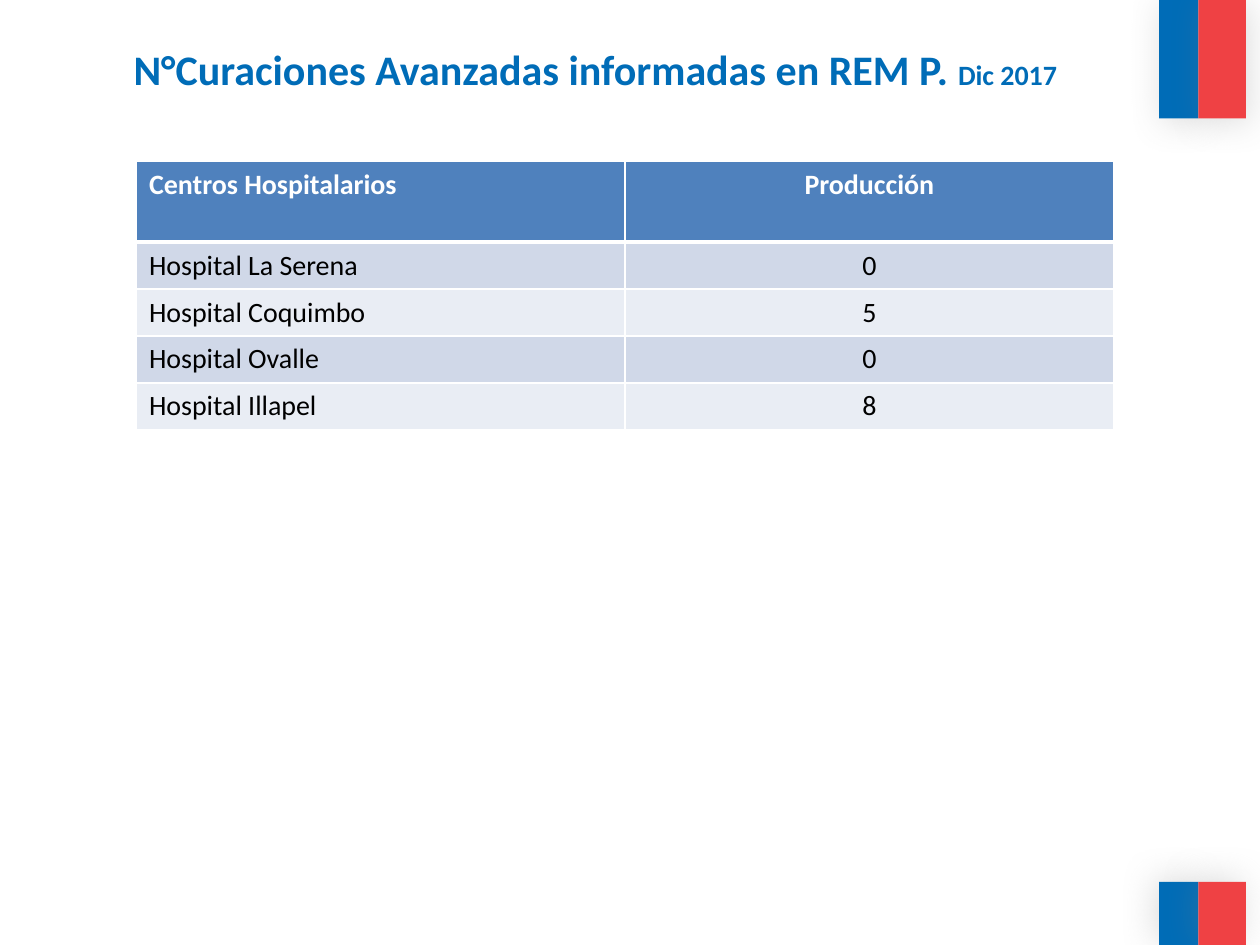
from lxml import etree
from pptx import Presentation
from pptx.dml.color import RGBColor
from pptx.enum.shapes import MSO_SHAPE
from pptx.enum.text import MSO_ANCHOR, PP_ALIGN
from pptx.oxml import parse_xml
from pptx.oxml.ns import nsdecls, qn
from pptx.util import Pt

RECTANGLE = MSO_SHAPE.RECTANGLE
LEFT, CENTER = PP_ALIGN.LEFT, PP_ALIGN.CENTER
TOP = MSO_ANCHOR.TOP

FONT = "Calibri"
BLUE = RGBColor(0x00, 0x6C, 0xB7)
RED = RGBColor(0xEF, 0x41, 0x44)
HEADER_BLUE = RGBColor(0x4F, 0x81, 0xBD)
BANDS = (RGBColor(0xD0, 0xD8, 0xE8), RGBColor(0xE9, 0xED, 0xF4))
WHITE = RGBColor(0xFF, 0xFF, 0xFF)
BLACK = RGBColor(0x00, 0x00, 0x00)
GRAY = RGBColor(0x80, 0x80, 0x80)

ROWS = [
    ("Centros Hospitalarios", "Producción"),
    ("Hospital La Serena", "0"),
    ("Hospital Coquimbo", "5"),
    ("Hospital Ovalle", "0"),
    ("Hospital Illapel", "8"),
]
HEADER_HEIGHT, ROW_HEIGHT = 46, 26.8


def add_shadow(shape, degrees):
    """Give the shape a soft gray shadow in the given direction."""
    shape.shadow.inherit = False
    effects = shape._element.spPr.find(qn("a:effectLst"))
    effects.append(parse_xml(
        f'<a:outerShdw {nsdecls("a")} blurRad="{Pt(20)}" dist="{Pt(3)}" '
        f'dir="{degrees * 60000}" algn="ctr" rotWithShape="0">'
        f'<a:srgbClr val="{GRAY}"><a:alpha val="25000"/></a:srgbClr>'
        '</a:outerShdw>'))


def add_flag(slide, top, height, shadow_degrees):
    """Add a blue and a red block side by side."""
    for left, width, color in ((662.4, 22.4, BLUE), (684.8, 27.2, RED)):
        block = slide.shapes.add_shape(
            RECTANGLE, Pt(left), Pt(top), Pt(width), Pt(height))
        block.fill.solid()
        block.fill.fore_color.rgb = color
        block.line.fill.background()
        add_shadow(block, shadow_degrees)


def format_title(slide):
    title = slide.shapes.title
    title.left, title.top = Pt(18.7), Pt(21)
    title.width, title.height = Pt(643), Pt(48)
    frame = title.text_frame
    frame.word_wrap = True
    frame.vertical_anchor = TOP
    paragraph = frame.paragraphs[0]
    paragraph.alignment = CENTER
    for text, size in (("N°Curaciones Avanzadas informadas en REM P. ", 24),
                       ("Dic 2017", 16)):
        run = paragraph.add_run()
        run.text = text
        run.font.name = FONT
        run.font.size = Pt(size)
        run.font.bold = True
        run.font.color.rgb = BLUE


def set_borders(cell, bottom_width):
    """Draw white borders, which must precede the fill in the cell."""
    properties = cell._tc.get_or_add_tcPr()
    widths = {"lnL": 1, "lnR": 1, "lnT": 1, "lnB": bottom_width}
    for position, (name, width) in enumerate(widths.items()):
        line = etree.Element(qn(f"a:{name}"), w=str(Pt(width)))
        fill = etree.SubElement(line, qn("a:solidFill"))
        etree.SubElement(fill, qn("a:srgbClr"), val=str(WHITE))
        properties.insert(position, line)


def format_cell(cell, text, alignment, fill, color, is_header):
    cell.text = text
    cell.fill.solid()
    cell.fill.fore_color.rgb = fill
    set_borders(cell, 3 if is_header else 1)
    paragraph = cell.text_frame.paragraphs[0]
    paragraph.alignment = alignment
    paragraph.font.name = FONT
    paragraph.font.size = Pt(16)
    paragraph.font.bold = is_header
    paragraph.font.color.rgb = color


def add_production_table(slide):
    height = HEADER_HEIGHT + ROW_HEIGHT * (len(ROWS) - 1)
    table = slide.shapes.add_table(
        len(ROWS), 2, Pt(78), Pt(92.4), Pt(558.4), Pt(height)).table
    for row_index, texts in enumerate(ROWS):
        is_header = row_index == 0
        table.rows[row_index].height = Pt(
            HEADER_HEIGHT if is_header else ROW_HEIGHT)
        fill = HEADER_BLUE if is_header else BANDS[(row_index - 1) % 2]
        color = WHITE if is_header else BLACK
        for column, (text, alignment) in enumerate(zip(texts, (LEFT, CENTER))):
            format_cell(table.cell(row_index, column), text, alignment,
                        fill, color, is_header)


def main():
    presentation = Presentation()
    presentation.slide_width, presentation.slide_height = Pt(720), Pt(540)
    slide = presentation.slides.add_slide(presentation.slide_layouts[5])

    # Flag blocks in the right-hand corners
    add_flag(slide, 0, 67.7, 45)
    add_flag(slide, 504, 36, 215)

    # Title and table
    format_title(slide)
    add_production_table(slide)
    presentation.save("out.pptx")


if __name__ == "__main__":
    main()
